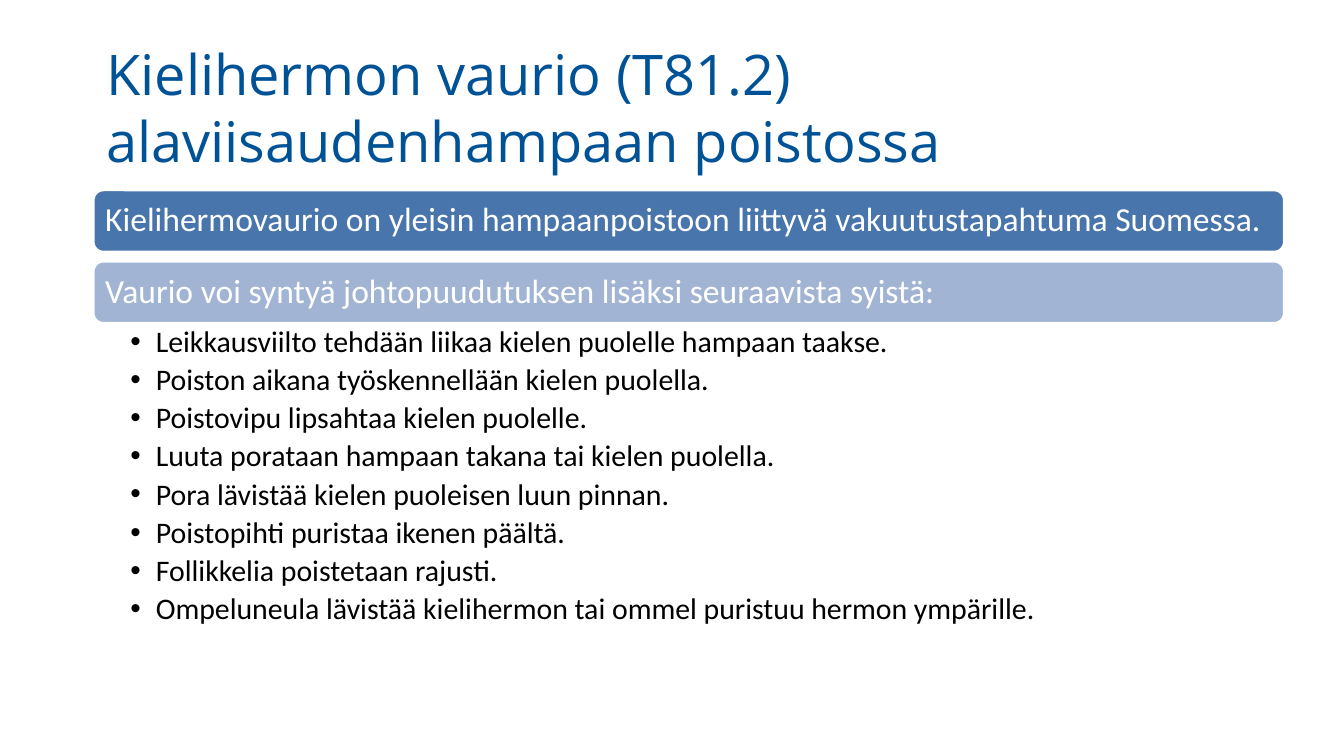
from lxml.etree import SubElement
from pptx import Presentation
from pptx.dml.color import RGBColor
from pptx.enum.shapes import MSO_SHAPE as Shape
from pptx.enum.text import MSO_ANCHOR as Anchor, MSO_AUTO_SIZE as AutoSize, PP_ALIGN as Align
from pptx.oxml.ns import qn
from pptx.util import Inches, Pt

TITLE_BLUE = RGBColor(0x00, 0x52, 0x96)
DARK_BLUE = RGBColor(0x48, 0x75, 0xAC)
LIGHT_BLUE = RGBColor(0xA2, 0xB4, 0xD4)
WHITE = RGBColor(0xFF, 0xFF, 0xFF)
BLACK = RGBColor(0x00, 0x00, 0x00)

LEFT, WIDTH = 0.69, 8.87
BANNER_TOP, BANNER_HEIGHT, BANNER_GAP = 1.41, 0.47, 0.06

BANNERS = [
    ("Kielihermovaurio on yleisin hampaanpoistoon liittyvä vakuutustapahtuma Suomessa.", DARK_BLUE),
    ("Vaurio voi syntyä johtopuudutuksen lisäksi seuraavista syistä:", LIGHT_BLUE),
]
CAUSES = [
    "Leikkausviilto tehdään liikaa kielen puolelle hampaan taakse.",
    "Poiston aikana työskennellään kielen puolella.",
    "Poistovipu lipsahtaa kielen puolelle.",
    "Luuta porataan hampaan takana tai kielen puolella.",
    "Pora lävistää kielen puoleisen luun pinnan.",
    "Poistopihti puristaa ikenen päältä.",
    "Follikkelia poistetaan rajusti.",
    "Ompeluneula lävistää kielihermon tai ommel puristuu hermon ympärille.",
]


def set_frame(frame, anchor, left, top, right, bottom):
    frame.word_wrap = True
    frame.auto_size = AutoSize.NONE
    frame.vertical_anchor = anchor
    frame.margin_left, frame.margin_top = Inches(left), Inches(top)
    frame.margin_right, frame.margin_bottom = Inches(right), Inches(bottom)


def style_paragraph(para, font_name, size, color, line_spacing=0.9):
    para.alignment = Align.LEFT
    para.line_spacing = line_spacing
    for span in para.runs:
        span.font.name = font_name
        span.font.size = Pt(size)
        span.font.color.rgb = color


def add_bullet(para, indent):
    props = para._p.get_or_add_pPr()
    props.set("marL", str(Inches(indent)))
    props.set("indent", str(-Inches(indent)))
    SubElement(props, qn("a:buFont"), typeface="Arial")
    SubElement(props, qn("a:buChar"), char="•")


def place_title(page, left, top, width, height):
    title = page.shapes.title
    title.left, title.top = Inches(left), Inches(top)
    title.width, title.height = Inches(width), Inches(height)
    frame = title.text_frame
    frame.text = "Kielihermon vaurio (T81.2) alaviisaudenhampaan poistossa"
    set_frame(frame, Anchor.MIDDLE, 0.1, 0.05, 0.1, 0.05)
    style_paragraph(frame.paragraphs[0], "Open Sans", 30, TITLE_BLUE, line_spacing=1.0)


def add_banner(page, left, top, width, height, text, color):
    banner = page.shapes.add_shape(
        Shape.ROUNDED_RECTANGLE, Inches(left), Inches(top), Inches(width), Inches(height))
    banner.shadow.inherit = False
    banner.adjustments[0] = 0.17
    banner.fill.solid()
    banner.fill.fore_color.rgb = color
    banner.line.color.rgb = WHITE
    banner.line.width = Pt(2)
    frame = banner.text_frame
    frame.text = text
    set_frame(frame, Anchor.MIDDLE, 0.07, 0.07, 0.07, 0.07)
    style_paragraph(frame.paragraphs[0], "Calibri", 18, WHITE)


def add_cause_list(page, left, top, width, height):
    box = page.shapes.add_textbox(Inches(left), Inches(top), Inches(width), Inches(height))
    frame = box.text_frame
    set_frame(frame, Anchor.TOP, 0.28, 0.02, 0.12, 0.02)
    frame.text = "\n".join(CAUSES)
    for para in frame.paragraphs:
        add_bullet(para, 0.19)
        style_paragraph(para, "Calibri", 16, BLACK)
        para.space_after = Pt(3.2)


def main():
    deck = Presentation()
    deck.slide_width = Inches(10)
    deck.slide_height = deck.slide_width * 9 // 16
    page = deck.slides.add_slide(deck.slide_layouts[5])
    place_title(page, LEFT, 0.24, 8.62, 1.11)
    top = BANNER_TOP
    for text, color in BANNERS:
        add_banner(page, LEFT, top, WIDTH, BANNER_HEIGHT, text, color)
        top += BANNER_HEIGHT + BANNER_GAP
    add_cause_list(page, LEFT, top - BANNER_GAP, WIDTH, 2.4)
    deck.save("out.pptx")


if __name__ == "__main__":
    main()
